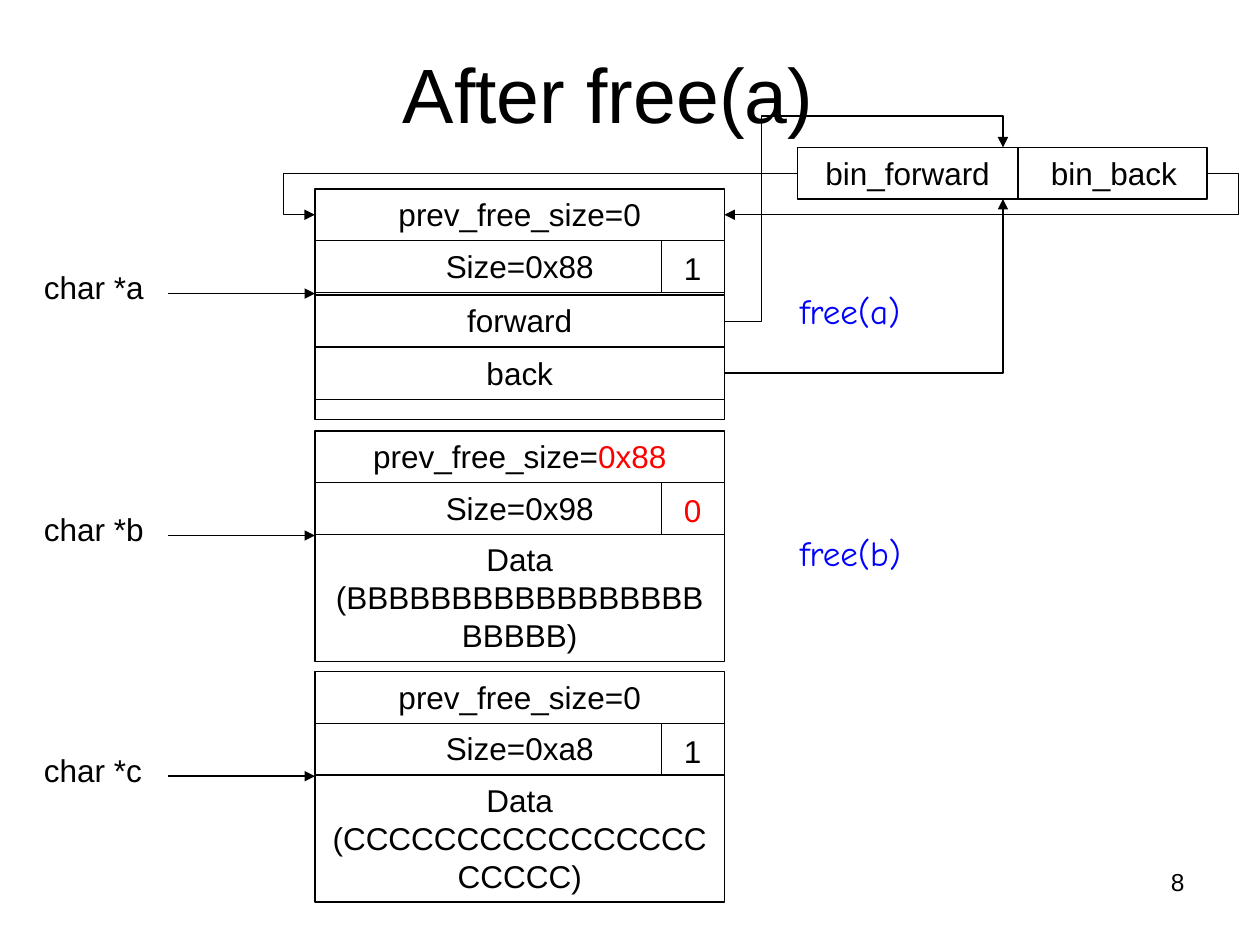
import pptx
import pptx.util
import pptx.dml.color
import pptx.enum.shapes
import pptx.enum.text
import pptx.oxml
import pptx.oxml.ns

Inches = pptx.util.Inches
ALIGN = pptx.enum.text.PP_ALIGN
ANCHOR = pptx.enum.text.MSO_ANCHOR
LINK = pptx.enum.shapes.MSO_CONNECTOR
RECT = pptx.enum.shapes.MSO_SHAPE.RECTANGLE

COLORS = {"ink": "000000", "new": "FF0000", "call": "0000FF"}

# Each run is (text, colour name)
CHUNKS = [
    {"top": 1.5, "name": "char *a", "prev": [("prev_free_size=0", "ink")],
     "size": "Size=0x88", "flag": ("1", "ink"), "data": "",
     "links": ["forward", "back"], "call": "free(a)"},
    {"top": 3.42, "name": "char *b",
     "prev": [("prev_free_size=", "ink"), ("0x88", "new")],
     "size": "Size=0x98", "flag": ("0", "new"),
     "data": "Data (BBBBBBBBBBBBBBBBBBBBBB)", "links": [], "call": "free(b)"},
    {"top": 5.33, "name": "char *c", "prev": [("prev_free_size=0", "ink")],
     "size": "Size=0xa8", "flag": ("1", "ink"),
     "data": "Data (CCCCCCCCCCCCCCCCCCCCC)", "links": [], "call": ""},
]
LEFT, WIDE, ROW, BODY = 2.5, 3.25, 0.41, 1.01
RIGHT = LEFT + WIDE
BIN_X, BIN_Y = 6.33, 1.17
BIN_MID = BIN_Y + ROW / 2
BIN_IN = 7.96

# Bent arrows: start, end, preset shape, bends as a share of the span
top = CHUNKS[0]["top"]
BENT = [
    ((BIN_X, BIN_MID), (LEFT, top + ROW / 2), "bentConnector3", [1.065]),
    ((BIN_X + WIDE, BIN_MID), (RIGHT, top + ROW / 2), "bentConnector3", [-0.065]),
    ((RIGHT, 2.55), (BIN_IN, BIN_Y), "bentConnector4", [0.132, 1.181]),
    ((RIGHT, 2.96), (BIN_IN, BIN_Y + ROW), "bentConnector2", []),
]

deck = pptx.Presentation()
deck.slide_width, deck.slide_height = Inches(10), Inches(7.5)
slide = deck.slides.add_slide(deck.slide_layouts[5])


def color(name):
    return pptx.dml.color.RGBColor.from_string(COLORS[name])


def write(shape, runs, size=18, font="Arial", align=ALIGN.LEFT, anchor=ANCHOR.TOP):
    frame = shape.text_frame
    frame.word_wrap = True
    frame.vertical_anchor = anchor
    para = frame.paragraphs[0]
    para.alignment = align
    for text, hue in runs:
        run = para.add_run()
        run.text = text
        run.font.size = pptx.util.Pt(size)
        run.font.name = font
        run.font.color.rgb = color(hue)


def label(x, y, w, h, runs, **style):
    write(slide.shapes.add_textbox(*map(Inches, (x, y, w, h))), runs, **style)


def box(x, y, h, runs, align=ALIGN.CENTER):
    shape = slide.shapes.add_shape(RECT, *map(Inches, (x, y, WIDE, h)))
    shape.shadow.inherit = False
    shape.fill.background()
    shape.line.color.rgb = color("ink")
    shape.line.width = pptx.util.Pt(0.75)
    write(shape, runs, align=align)
    return shape


def add(node, tag, **attrs):
    child = pptx.oxml.parse_xml(f"<{tag} {pptx.oxml.ns.nsdecls('a')}/>")
    for key, value in attrs.items():
        child.set(key, value)
    node.append(child)
    return child


def line(start, end, kind=LINK.STRAIGHT, head=True):
    link = slide.shapes.add_connector(kind, *map(Inches, start + end))
    link.line.color.rgb = color("ink")
    link.line.width = pptx.util.Pt(0.75)
    if head:
        add(link.line._get_or_add_ln(), "a:tailEnd", type="triangle")
    add(link._element.spPr, "a:effectLst")
    return link


def bend(start, end, preset, shares):
    """Draw an elbow arrow whose bends lie at the given shares of its span."""
    link = line(start, end, LINK.ELBOW)
    geom = link._element.spPr.find(pptx.oxml.ns.qn("a:prstGeom"))
    geom.set("prst", preset)
    for old in list(geom):
        geom.remove(old)
    guides = add(geom, "a:avLst")
    for i, share in enumerate(shares, 1):
        add(guides, "a:gd", name=f"adj{i}", fmla=f"val {round(share * 100000)}")


title = slide.shapes.title
title.left, title.top, title.width, title.height = map(Inches, (0.33, 0.3, 9, 0.87))
write(title, [("After free(a)", "ink")], size=44, align=ALIGN.CENTER, anchor=ANCHOR.MIDDLE)

for chunk in CHUNKS:
    top = chunk["top"]
    box(LEFT, top, ROW, chunk["prev"])
    box(LEFT, top + ROW, ROW, [(chunk["size"], "ink")])
    line((5.25, top + ROW), (5.25, top + 2 * ROW), head=False)
    label(5.33, top + 0.43, 0.5, 0.4, [chunk["flag"]])
    box(LEFT, top + 2 * ROW, BODY, [(chunk["data"], "ink")] if chunk["data"] else [])
    for i, name in enumerate(chunk["links"]):
        box(LEFT, top + 0.84 + i * 0.42, ROW, [(name, "ink")])
    label(0.25, top + 0.58, 1.08, 0.4, [(chunk["name"], "ink")])
    line((1.33, top + 0.83), (LEFT, top + 0.83))
    if chunk["call"]:
        label(6.25, top + 0.75, 1.75, 0.44, [(chunk["call"], "call")],
              size=20, font="Comic Neue")

# The two bin names share one box, set apart by a tab stop
bins = box(BIN_X, BIN_Y, ROW, [("bin_forward\tbin_back", "ink")], align=ALIGN.LEFT)
bins.text_frame.margin_left = Inches(0.22)
stops = add(bins.text_frame.paragraphs[0]._p.get_or_add_pPr(), "a:tabLst")
add(stops, "a:tab", pos=str(Inches(1.79)), algn="l")
line((8.08, BIN_Y), (8.08, BIN_Y + ROW), head=False)

for arrow in BENT:
    bend(*arrow)

label(7.17, 6.83, 2.33, 0.52, [("8", "ink")], size=14, align=ALIGN.RIGHT)

deck.save("out.pptx")
